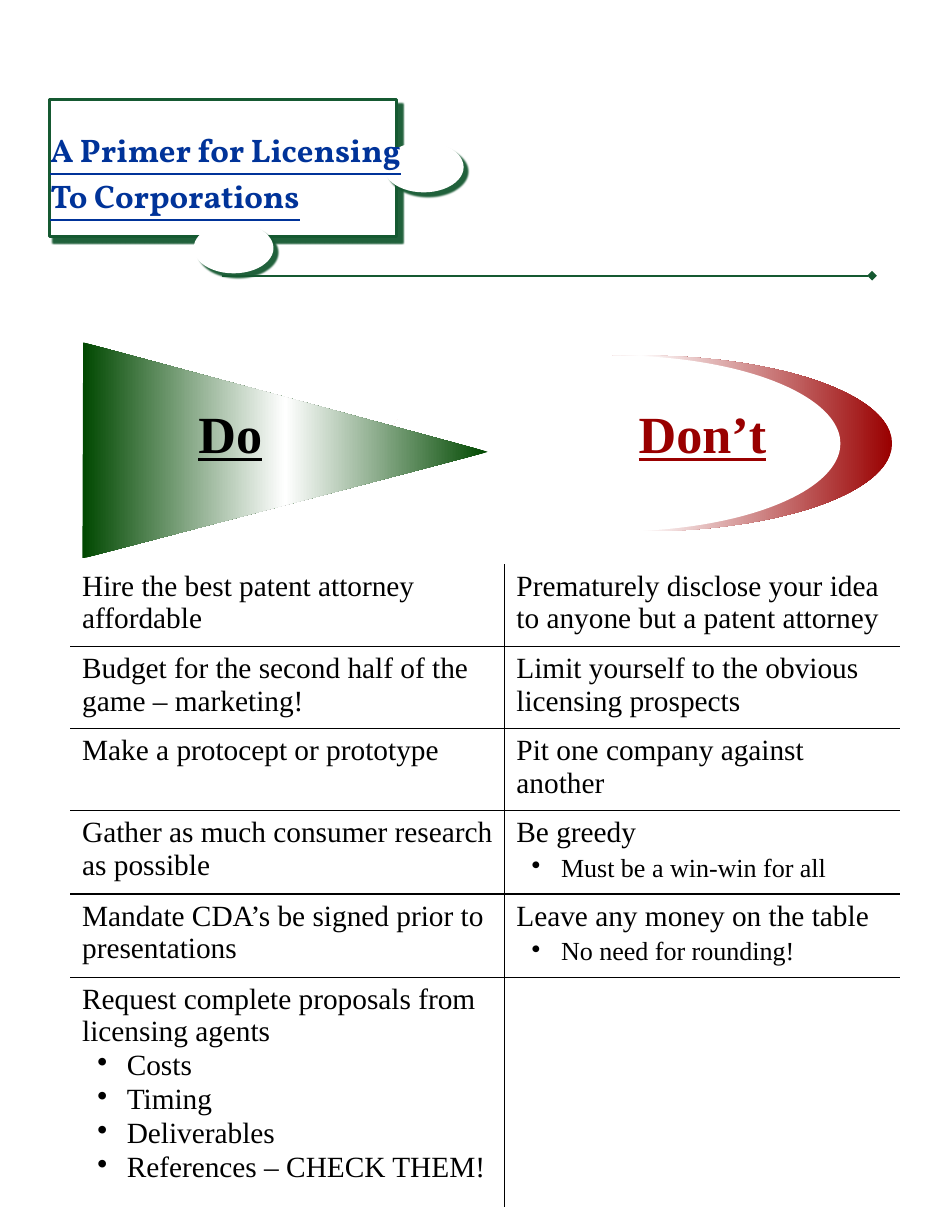
"""Build the one-page licensing primer with its Do and Don’t table."""
from dataclasses import dataclass

from lxml.etree import SubElement
from pptx import Presentation
from pptx.dml.color import RGBColor
from pptx.enum.shapes import MSO_CONNECTOR as Link, MSO_SHAPE as Preset
from pptx.enum.text import PP_ALIGN as Align
from pptx.oxml import parse_xml
from pptx.oxml.ns import nsdecls, qn
from pptx.util import Pt

SCALE = 9144
COLORS = {"frame": "155931", "paper": "FFFFFF", "ink": "000000",
          "title": "003399", "do": "004800", "dont": "990000"}
SERIF = "Times New Roman"


@dataclass(frozen=True)
class Box:
    x: int
    y: int
    w: int
    h: int


@dataclass(frozen=True)
class Words:
    text: str
    size: int = 18
    color: str = "ink"
    font: str = SERIF
    strong: bool = False
    bullet: bool = False
    spacing: float = 0.2
    indent: int = 0
    align: Align = Align.LEFT


@dataclass(frozen=True)
class Advice:
    do: list[Words]
    dont: list[Words]
    height: int


FRAME = [(Preset.RECTANGLE, Box(42, 85, 296, 117), 1.75),
         (Preset.OVAL, Box(327, 121, 68, 43), 0),
         (Preset.OVAL, Box(165, 190, 68, 43), 0)]

TITLE = [Words(line, 20, "title", "Vollkorn", strong=True)
         for line in ("A Primer for Licensing", "To Corporations")]

ADVICE = [
    Advice([Words("Do", 32, strong=True, indent=99)],
           [Words("Don’t", 32, "dont", strong=True, align=Align.CENTER)], 139),
    Advice([Words("Hire the best patent attorney affordable")],
           [Words("Prematurely disclose your idea to anyone but a patent attorney")], 70),
    Advice([Words("Budget for the second half of the game – marketing!")],
           [Words("Limit yourself to the obvious licensing prospects")], 70),
    Advice([Words("Make a protocept or prototype")],
           [Words("Pit one company against another")], 70),
    Advice([Words("Gather as much consumer research as possible")],
           [Words("Be greedy"), Words("Must be a win-win for all", 16, bullet=True)], 71),
    Advice([Words("Mandate CDA’s be signed prior to presentations")],
           [Words("Leave any money on the table"),
            Words("No need for rounding!", 16, bullet=True)], 71),
    Advice([Words("Request complete proposals from licensing agents")]
           + [Words(item, bullet=True, spacing=0.05) for item in
              ("Costs", "Timing", "Deliverables", "References – CHECK THEM!")],
           [], 196),
]


def px(length: int) -> int:
    """Turn px into EMU."""
    return length * SCALE


def rgb(name: str) -> RGBColor:
    """Look up a named colour."""
    return RGBColor.from_string(COLORS[name])


def place(box: Box) -> tuple[int, int, int, int]:
    """Give a box as left, top, width and height in EMU."""
    return px(box.x), px(box.y), px(box.w), px(box.h)


def write(frame, lines: list[Words]) -> None:
    """Fill a text frame, one paragraph for each entry."""
    frame.word_wrap = True
    for index, words in enumerate(lines):
        paragraph = frame.add_paragraph() if index else frame.paragraphs[0]
        paragraph.alignment = words.align
        if index:
            paragraph.space_before = Pt(words.size * words.spacing)
        properties = paragraph._p.get_or_add_pPr()
        if words.bullet:
            paragraph.level = 1
            SubElement(properties, qn("a:buChar"), char="•")
        properties.set("marL", str(px(38 if words.bullet else words.indent)))
        properties.set("indent", str(px(-25 if words.bullet else 0)))
        run = paragraph.add_run()
        run.text = words.text
        run.font.name = words.font
        run.font.size = Pt(words.size)
        run.font.bold = run.font.underline = words.strong
        run.font.color.rgb = rgb(words.color)


def draw_shape(slide, preset: Preset, box: Box, line: float = 0):
    """Draw a white shape, outlined when a line width is given."""
    shape = slide.shapes.add_shape(preset, *place(box))
    shape.shadow.inherit = False
    shape.fill.solid()
    shape.fill.fore_color.rgb = rgb("paper")
    if line:
        shape.line.color.rgb = rgb("frame")
        shape.line.width = Pt(line)
    else:
        shape.line.fill.background()
    return shape


def cast_shadow(shape) -> None:
    """Give a shape a green shadow to the lower right."""
    effects = shape._element.spPr.find(qn("a:effectLst"))
    effects.append(parse_xml(
        f'<a:outerShdw {nsdecls("a")} blurRad="{Pt(1)}" dist="{Pt(4)}" dir="2700000" '
        f'algn="ctr" rotWithShape="0"><a:srgbClr val="{COLORS["frame"]}">'
        '<a:alpha val="94000"/></a:srgbClr></a:outerShdw>'))


def shade(shape, color: str) -> None:
    """Blend from a colour to white and back, left to right on the page."""
    shape.fill.gradient()
    shape.fill.gradient_angle = 0
    gradient = shape._element.spPr.find(qn("a:gradFill"))
    gradient.set("rotWithShape", "0")
    stops = gradient.find(qn("a:gsLst"))
    stops.clear()
    for position, name in ((0, color), (50, "paper"), (100, color)):
        stop = SubElement(stops, qn("a:gs"), pos=str(position * 1000))
        SubElement(stop, qn("a:srgbClr"), val=COLORS[name])


def draw_rule(slide) -> None:
    """Draw the line that ends in a diamond."""
    rule = slide.shapes.add_connector(Link.STRAIGHT, px(189), px(235), px(743), px(235))
    rule.line.color.rgb = rgb("frame")
    rule.line.width = Pt(1)
    SubElement(rule.line._get_or_add_ln(), qn("a:tailEnd"), type="diamond")
    SubElement(rule._element.spPr, qn("a:effectLst"))


def set_borders(cell, shown: dict[str, bool]) -> None:
    """Set the four cell borders, black or none."""
    properties = cell._tc.get_or_add_tcPr()
    for index, (side, visible) in enumerate(shown.items()):
        paint = (f'<a:solidFill><a:srgbClr val="{COLORS["ink"]}"/></a:solidFill>'
                 if visible else "<a:noFill/>")
        properties.insert(index, parse_xml(
            f'<a:ln{side} {nsdecls("a")} w="{Pt(1)}">{paint}</a:ln{side}>'))


def draw_advice(slide) -> None:
    """Draw the table of advice with its inner lines."""
    height = sum(advice.height for advice in ADVICE)
    table = slide.shapes.add_table(
        len(ADVICE), 2, *place(Box(60, 342, 707, height))).table
    table.first_row = table.horz_banding = False
    for column, width in zip(table.columns, (370, 337)):
        column.width = px(width)
    last = len(ADVICE) - 1
    for row, advice in enumerate(ADVICE):
        table.rows[row].height = px(advice.height)
        for column, lines in enumerate((advice.do, advice.dont)):
            cell = table.cell(row, column)
            cell.fill.background()
            set_borders(cell, {"L": row > 0 and column == 1, "R": row > 0 and column == 0,
                               "T": row > 1, "B": 0 < row < last})
            write(cell.text_frame, lines)


def main() -> None:
    """Build and save the slide."""
    deck = Presentation()
    deck.slide_width, deck.slide_height = px(800), px(1050)
    slide = deck.slides.add_slide(deck.slide_layouts[6])
    for preset, box, line in FRAME:
        cast_shadow(draw_shape(slide, preset, box, line))
    draw_rule(slide)
    shade(draw_shape(slide, Preset.OVAL, Box(331, 303, 429, 150)), "dont")
    draw_shape(slide, Preset.OVAL, Box(331, 303, 385, 150))
    arrow = draw_shape(slide, Preset.ISOSCELES_TRIANGLE, Box(151, 212, 184, 345))
    arrow.rotation = 90.2
    shade(arrow, "do")
    draw_advice(slide)
    title = slide.shapes.add_textbox(*place(Box(33, 106, 351, 84)))
    write(title.text_frame, TITLE)
    deck.save("out.pptx")


if __name__ == "__main__":
    main()
